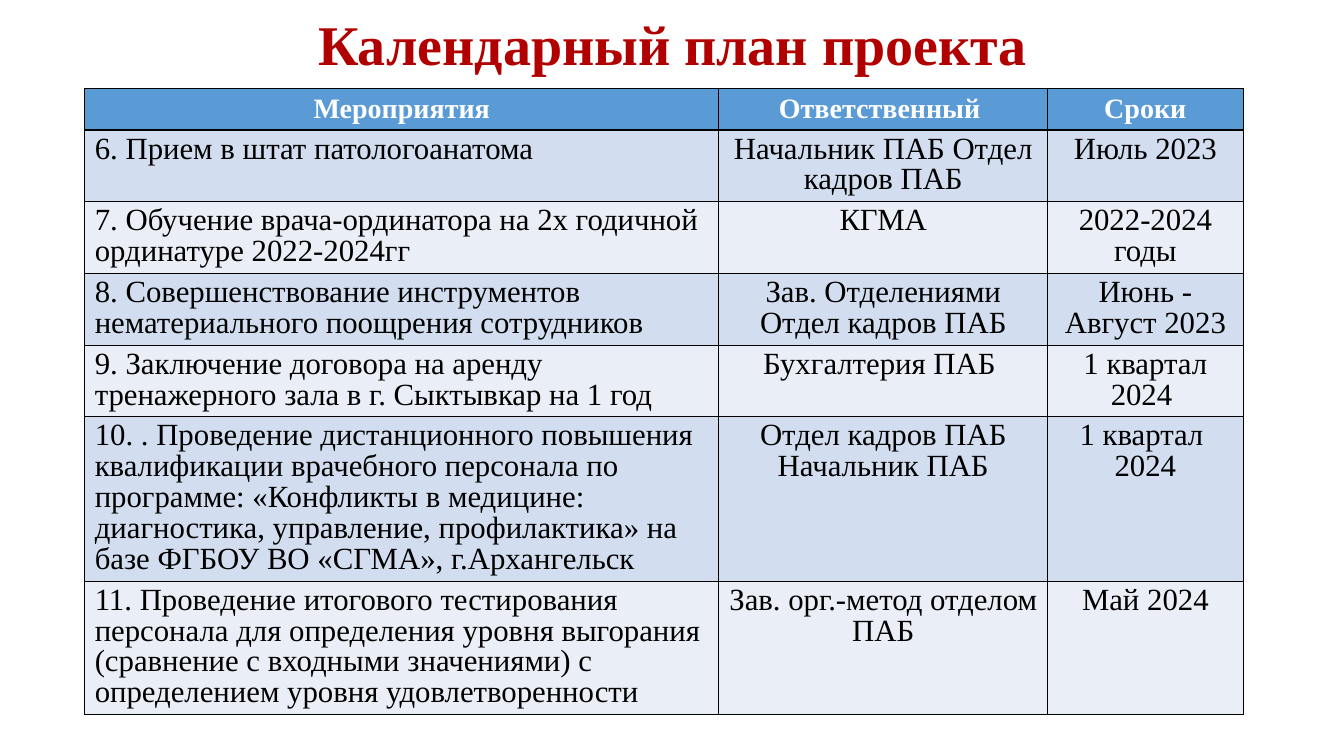
import lxml.etree
import pptx
import pptx.dml.color
import pptx.enum.text
import pptx.oxml.ns
import pptx.util

PX = 9144
FONT = "Times New Roman"
TITLE_RED = pptx.dml.color.RGBColor(0xB0, 0x00, 0x00)
BLACK = pptx.dml.color.RGBColor(0x00, 0x00, 0x00)
WHITE = pptx.dml.color.RGBColor(0xFF, 0xFF, 0xFF)
HEADER_BLUE = pptx.dml.color.RGBColor(0x5B, 0x9B, 0xD5)
BANDS = [
    pptx.dml.color.RGBColor(0xEA, 0xEF, 0xF7),
    pptx.dml.color.RGBColor(0xD2, 0xDE, 0xEF),
]
CENTER = pptx.enum.text.PP_ALIGN.CENTER
LEFT = pptx.enum.text.PP_ALIGN.LEFT

TITLE_FORMAT = {"name": FONT, "size": pptx.util.Pt(40), "bold": True}
HEADER_FORMAT = {"name": FONT, "size": pptx.util.Pt(20), "bold": True}
BODY_FORMAT = {"name": FONT, "size": pptx.util.Pt(22), "bold": False}

COLUMN_WIDTHS = [629, 326, 194]
ROW_HEIGHTS = [41, 71, 71, 71, 71, 163, 132]
PLAN = [
    ("Мероприятия", "Ответственный ", "Сроки"),
    ("6. Прием в штат патологоанатома", "Начальник ПАБ Отдел кадров ПАБ", "Июль 2023"),
    (
        "7. Обучение врача-ординатора на 2х годичной ординатуре 2022-2024гг",
        "КГМА",
        "2022-2024 годы",
    ),
    (
        "8. Совершенствование инструментов нематериального поощрения сотрудников",
        "Зав. Отделениями Отдел кадров ПАБ",
        "Июнь - Август 2023",
    ),
    (
        "9. Заключение договора на аренду тренажерного зала в г. Сыктывкар на 1 год",
        "Бухгалтерия ПАБ ",
        "1 квартал 2024 ",
    ),
    (
        "10. . Проведение дистанционного повышения квалификации врачебного персонала "
        "по программе: «Конфликты в медицине: диагностика, управление, профилактика» "
        "на базе ФГБОУ ВО «СГМА», г.Архангельск",
        "Отдел кадров ПАБ\nНачальник ПАБ",
        "1 квартал \n2024",
    ),
    (
        "11. Проведение итогового тестирования персонала для определения уровня "
        "выгорания (сравнение с входными значениями) с определением уровня "
        "удовлетворенности",
        "Зав. орг.-метод отделом ПАБ",
        "Май 2024",
    ),
]


def px(length):
    """Turn whole pixels into EMU."""
    return pptx.util.Emu(length * PX)


def write_text(frame, text, font_format, color, align, spacing):
    """Write one paragraph per line of text and format each of them."""
    frame.text = text
    for paragraph in frame.paragraphs:
        paragraph.alignment = align
        paragraph.line_spacing = spacing
        for run in paragraph.runs:
            for attribute, value in font_format.items():
                setattr(run.font, attribute, value)
            run.font.color.rgb = color


def add_borders(cell):
    """Draw a thin black line on all four sides of a cell."""
    properties = cell._tc.get_or_add_tcPr()
    qn = pptx.oxml.ns.qn
    for position, side in enumerate(("a:lnL", "a:lnR", "a:lnT", "a:lnB")):
        line = lxml.etree.Element(qn(side), w=str(pptx.util.Pt(1)))
        fill = lxml.etree.SubElement(line, qn("a:solidFill"))
        lxml.etree.SubElement(fill, qn("a:srgbClr"), val=str(BLACK))
        properties.insert(position, line)


def add_title(slide, text):
    """Place and fill the slide title."""
    title = slide.shapes.title
    box = {"left": 92, "top": 11, "width": 1150, "height": 73}
    for attribute, length in box.items():
        setattr(title, attribute, px(length))
    title.text_frame.vertical_anchor = pptx.enum.text.MSO_ANCHOR.MIDDLE
    write_text(title.text_frame, text, TITLE_FORMAT, TITLE_RED, CENTER, 0.9)


def add_plan(slide):
    """Add the table of activities, people in charge and dates."""
    plan = slide.shapes.add_table(
        len(PLAN), len(COLUMN_WIDTHS), px(84), px(88),
        px(sum(COLUMN_WIDTHS)), px(sum(ROW_HEIGHTS)),
    ).table
    for column, width in zip(plan.columns, COLUMN_WIDTHS):
        column.width = px(width)
    for row_index, (entries, height) in enumerate(zip(PLAN, ROW_HEIGHTS)):
        plan.rows[row_index].height = px(height)
        is_header = row_index == 0
        font_format = HEADER_FORMAT if is_header else BODY_FORMAT
        color = WHITE if is_header else BLACK
        background = HEADER_BLUE if is_header else BANDS[row_index % 2]
        for column_index, entry in enumerate(entries):
            cell = plan.cell(row_index, column_index)
            align = CENTER if is_header or column_index else LEFT
            cell.fill.solid()
            cell.fill.fore_color.rgb = background
            add_borders(cell)
            write_text(
                cell.text_frame, entry, font_format, color, align, pptx.util.Pt(22)
            )


def main():
    """Build the calendar plan slide and save it."""
    deck = pptx.Presentation()
    deck.slide_width, deck.slide_height = px(1333), px(750)
    slide = deck.slides.add_slide(deck.slide_layouts[5])
    add_title(slide, "Календарный план проекта")
    add_plan(slide)
    deck.save("out.pptx")


if __name__ == "__main__":
    main()
